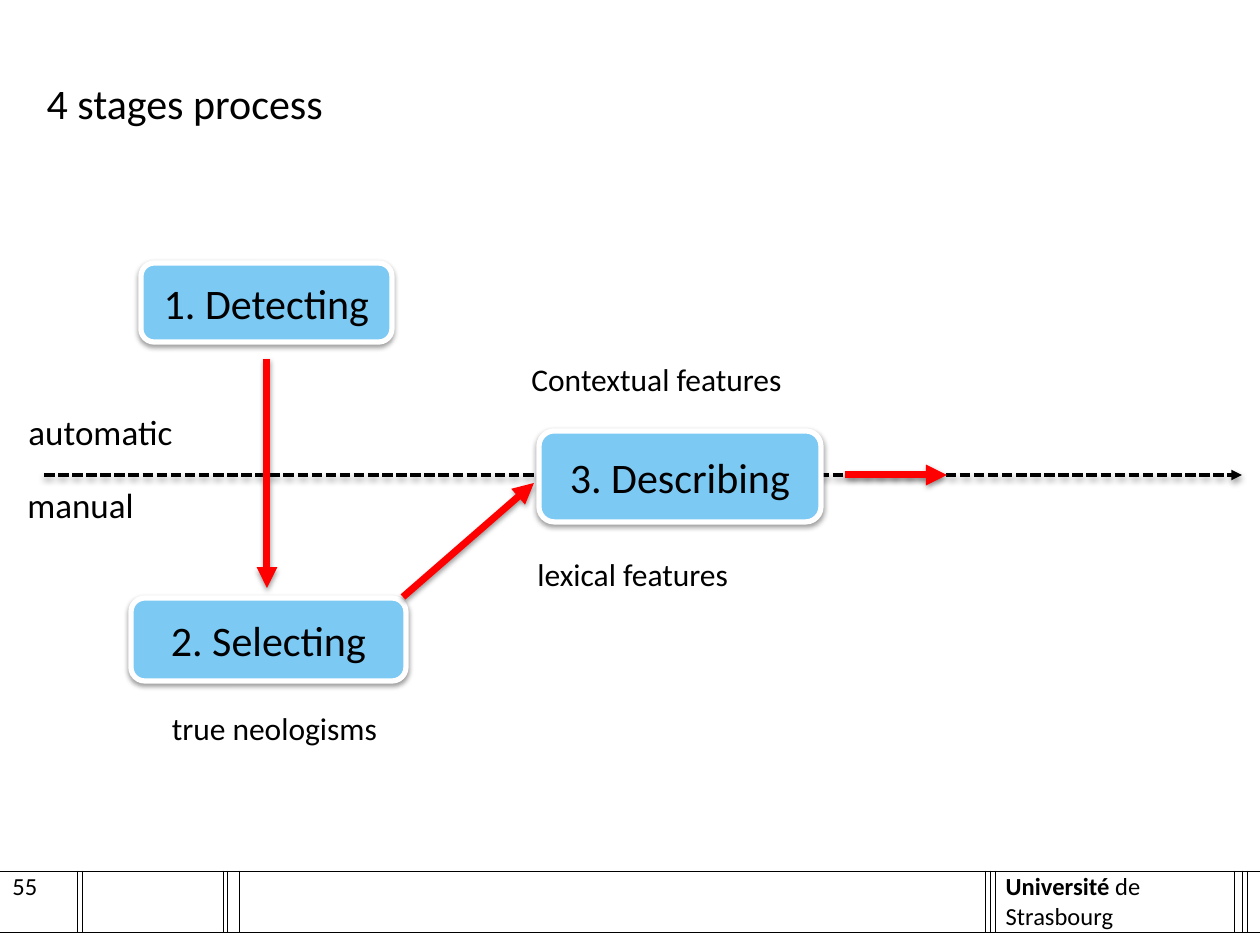
from lxml.etree import SubElement
from pptx import Presentation
from pptx.dml.color import RGBColor
from pptx.enum.dml import MSO_LINE
from pptx.enum.shapes import MSO_CONNECTOR, MSO_SHAPE
from pptx.enum.text import MSO_ANCHOR as ANCHOR, MSO_AUTO_SIZE, PP_ALIGN as ALIGN
from pptx.oxml.ns import qn
from pptx.util import Pt

PX = 914400 // 126
COLORS = {"text": "000000", "paper": "FFFFFF", "stage": "7CC9F4", "arrow": "FF0000"}
NO_GRID_STYLE = "{2D5ABB26-0587-4C30-8999-92F81FD0307C}"


def rgb(name):
    return RGBColor.from_string(COLORS[name])


def px(*values):
    return [v * PX for v in values]


def add_run(p, text, size, bold=False):
    r = p.add_run()
    r.text = text
    for name, value in {"size": Pt(size), "name": "Calibri", "bold": bold}.items():
        setattr(r.font, name, value)
    r.font.color.rgb = rgb("text")


def write(sp, text, size, align=ALIGN.LEFT, anchor=ANCHOR.TOP):
    tf = sp.text_frame
    formats = {"word_wrap": True, "auto_size": MSO_AUTO_SIZE.NONE, "vertical_anchor": anchor}
    for name, value in formats.items():
        setattr(tf, name, value)
    p = tf.paragraphs[0]
    p.alignment = align
    add_run(p, text, size)


def set_line(sp, color, width):
    sp.line.color.rgb = rgb(color)
    sp.line.width = Pt(width)


def add_shadow(sp):
    """Soft shadow straight below; call it once the line is set."""
    effects = SubElement(sp._element.spPr, qn("a:effectLst"))
    shadow = SubElement(effects, qn("a:outerShdw"), blurRad=str(Pt(3.1)), dist=str(Pt(1.6)),
                        dir="5400000", rotWithShape="0")
    color = SubElement(shadow, qn("a:srgbClr"), val=COLORS["text"])
    SubElement(color, qn("a:alpha"), val="38000")


def add_label(slide, box, text, size, align=ALIGN.LEFT, anchor=ANCHOR.TOP):
    write(slide.shapes.add_textbox(*px(*box)), text, size, align, anchor)


def add_stage(slide, box, text):
    sp = slide.shapes.add_shape(MSO_SHAPE.ROUNDED_RECTANGLE, *px(*box))
    sp.fill.solid()
    sp.fill.fore_color.rgb = rgb("stage")
    set_line(sp, "paper", 3)
    add_shadow(sp)
    write(sp, text, 24, ALIGN.CENTER, ANCHOR.MIDDLE)


def add_arrow(slide, start, end, color, width, dash=None):
    line = slide.shapes.add_connector(MSO_CONNECTOR.STRAIGHT, *px(*start, *end))
    set_line(line, color, width)
    if dash:
        line.line.dash_style = dash
    SubElement(line.line._get_or_add_ln(), qn("a:tailEnd"), type="triangle")
    add_shadow(line)


def add_heading(slide, box):
    title = slide.shapes.title
    title.left, title.top, title.width, title.height = px(*box)
    write(title, "4 stages process", 24)


def add_diagram(slide, box):
    x, y, w, _ = box
    axis_y = y + 223
    add_arrow(slide, (x + 44, axis_y), (x + w - 18, axis_y), "text", 2, MSO_LINE.SQUARE_DOT)

    for left, top, width, height, text in [
        (141, 11, 251, 79, "1. Detecting"),
        (131, 346, 275, 83, "2. Selecting"),
        (539, 179, 282, 91, "3. Describing"),
    ]:
        add_stage(slide, (x + left, y + top, width, height), text)

    for x1, y1, x2, y2 in [(267, 107, 267, 336), (403, 345, 534, 231), (845, 223, 947, 223)]:
        add_arrow(slide, (x + x1, y + y1), (x + x2, y + y2), "arrow", 4)

    for left, top, width, height, text, size, align in [
        (16, 152, 335, 55, "automatic", 20, ALIGN.LEFT),
        (15, 225, 159, 55, "manual", 20, ALIGN.LEFT),
        (126, 451, 297, 50, "true neologisms", 18, ALIGN.CENTER),
        (525, 297, 297, 50, "lexical features", 18, ALIGN.LEFT),
        (519, 102, 297, 50, "Contextual features", 18, ALIGN.LEFT),
    ]:
        add_label(slide, (x + left, y + top, width, height), text, size, align)


def add_border(cell, side):
    ln = SubElement(cell._tc.get_or_add_tcPr(), qn(f"a:{side}"), w=str(Pt(0.5)))
    fill = SubElement(ln, qn("a:solidFill"))
    SubElement(fill, qn("a:srgbClr"), val=COLORS["text"])


def add_footer(slide, box):
    """Ruled strip of narrow and wide cells between two merged rows."""
    widths = [77, 5, 141, 5, 12, 746, 5, 5, 239, 8, 5, 12]
    heights = [37, 61, 13]
    last = len(widths) - 1
    table = slide.shapes.add_table(len(heights), len(widths), *px(*box)).table
    table.first_row = table.horz_banding = False
    table._tbl.tblPr.find(qn("a:tableStyleId")).text = NO_GRID_STYLE
    for column, width in zip(table.columns, widths):
        column.width = width * PX
    for row, height in zip(table.rows, heights):
        row.height = height * PX

    for i in range(len(heights)):
        for j in range(len(widths)):
            cell = table.cell(i, j)
            cell.margin_left = cell.margin_right = cell.margin_top = cell.margin_bottom = 0
            cell.text_frame.paragraphs[0].font.size = Pt(4)
            if i == 1:
                sides = {"lnL": j > 0, "lnR": j < last, "lnT": True, "lnB": True}
                for side, shown in sides.items():
                    if shown:
                        add_border(cell, side)
            cell.fill.solid()
            cell.fill.fore_color.rgb = rgb("paper")
    for i in (0, 2):
        table.cell(i, 0).merge(table.cell(i, last))

    owner = table.cell(1, 8)
    owner.margin_left, owner.margin_top = px(10, 1)
    p = owner.text_frame.paragraphs[0]
    add_run(p, "Université", 14, bold=True)
    add_run(p, " de Strasbourg", 14)

    x, y = box[:2]
    add_label(slide, (x, y + 33, widths[0], 38), "55", 14, anchor=ANCHOR.MIDDLE)


def main():
    prs = Presentation()
    prs.slide_width, prs.slide_height = px(1260, 945)
    slide = prs.slides.add_slide(prs.slide_layouts[5])
    add_footer(slide, (0, 834, 1260, 111))
    add_heading(slide, (34, 71, 1016, 89))
    add_diagram(slide, (0, 252, 1260, 504))
    prs.save("out.pptx")


if __name__ == "__main__":
    main()
